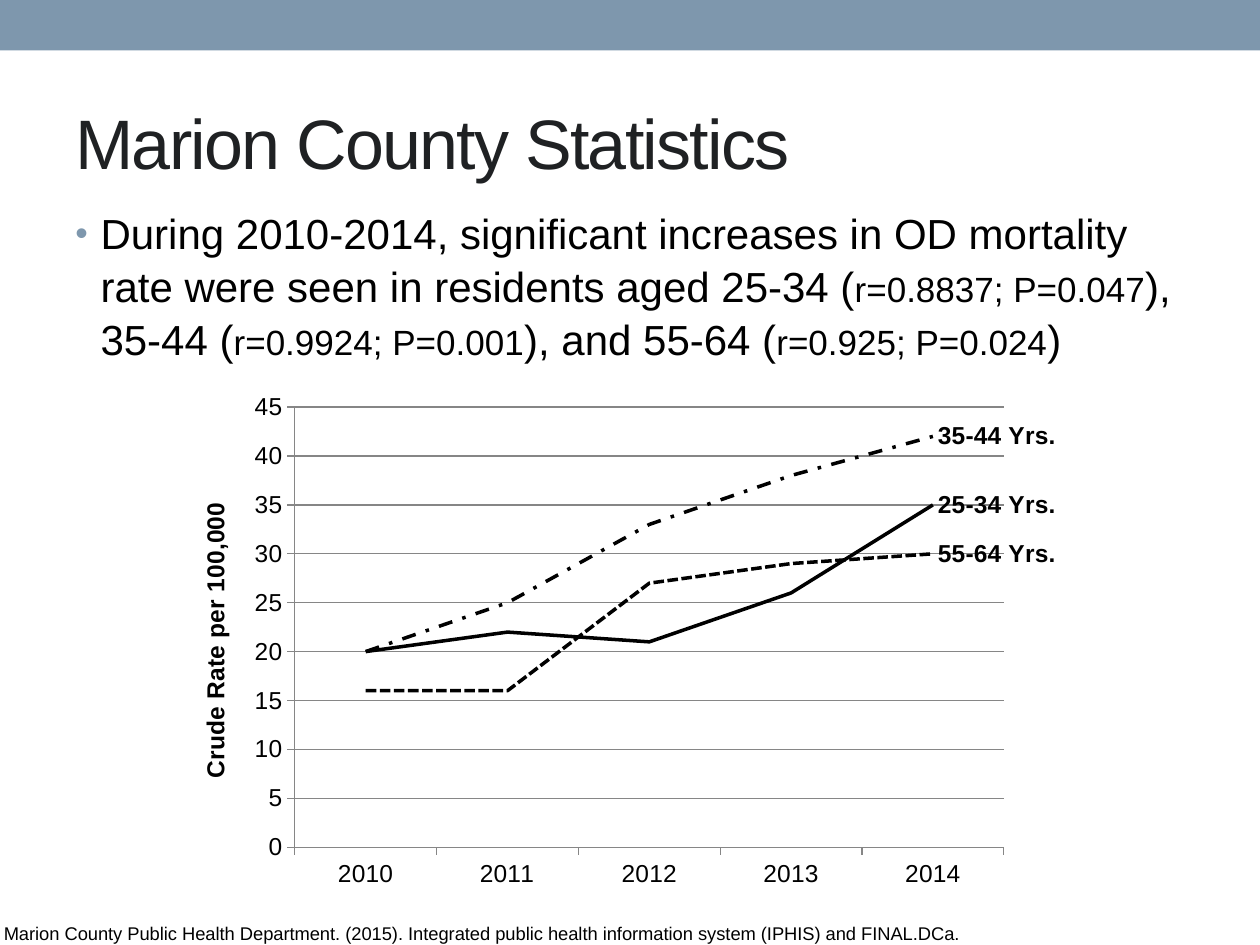
"""Build the Marion County overdose mortality slide."""
from dataclasses import dataclass

from lxml import etree
from pptx import Presentation
from pptx import util as u
from pptx.chart import data as chart_data
from pptx.dml.color import RGBColor
from pptx.enum import chart as charts, dml, shapes, text
from pptx.oxml import ns

BLACK = RGBColor(0x00, 0x00, 0x00)
TITLE_INK = RGBColor(0x1F, 0x21, 0x23)
SLATE = RGBColor(0x7E, 0x97, 0xAD)
GRID_GRAY = RGBColor(0x86, 0x86, 0x86)
FONT = "Arial"
YEARS = ("2010", "2011", "2012", "2013", "2014")


@dataclass(frozen=True)
class Box:
    left: float
    top: float
    width: float
    height: float

    def lengths(self) -> tuple:
        return tuple(u.Inches(n) for n in (self.left, self.top, self.width, self.height))


@dataclass(frozen=True)
class AgeGroup:
    name: str
    rates: tuple
    dash: dml.MSO_LINE


AGE_GROUPS = (
    AgeGroup("25-34 Yrs.", (20, 22, 21, 26, 35), dml.MSO_LINE.SOLID),
    AgeGroup("35-44 Yrs.", (20, 25, 33, 38, 42), dml.MSO_LINE.DASH_DOT),
    AgeGroup("55-64 Yrs.", (16, 16, 27, 29, 30), dml.MSO_LINE.SQUARE_DOT),
)
FINDINGS = (
    ("During 2010-2014, significant increases in OD mortality rate were seen in residents aged 25-34 (", 24),
    ("r=0.8837; P=0.047", 20),
    ("), 35-44 (", 24),
    ("r=0.9924; P=0.001", 20),
    ("), and 55-64 (", 24),
    ("r=0.925; P=0.024", 20),
    (")", 24),
)


def style_font(font, *, size: float, color: RGBColor = BLACK, bold: bool = False) -> None:
    font.name, font.size, font.bold = FONT, u.Pt(size), bold
    font.color.rgb = color


def add_run(paragraph, wording: str, *, size: float, color: RGBColor = BLACK, spacing: float = 0) -> None:
    run = paragraph.add_run()
    run.text = wording
    style_font(run.font, size=size, color=color)
    if spacing:
        run.font._element.set("spc", str(int(spacing * 100)))


def add_text_frame(slide, box: Box, *, anchor=text.MSO_ANCHOR.TOP, inset: bool = True):
    frame = slide.shapes.add_textbox(*box.lengths()).text_frame
    frame.word_wrap = True
    frame.vertical_anchor = anchor
    if not inset:
        frame.margin_left = frame.margin_top = frame.margin_right = frame.margin_bottom = 0
    return frame


def add_bullet(paragraph, *, color: RGBColor, percent: int, indent: float) -> None:
    properties = paragraph._p.get_or_add_pPr()
    properties.set("marL", str(u.Inches(indent)))
    properties.set("indent", str(-u.Inches(indent)))
    bullet_color = etree.SubElement(properties, ns.qn("a:buClr"))
    etree.SubElement(bullet_color, ns.qn("a:srgbClr"), val=str(color))
    etree.SubElement(properties, ns.qn("a:buSzPct"), val=str(percent * 1000))
    etree.SubElement(properties, ns.qn("a:buFont"), typeface=FONT)
    etree.SubElement(properties, ns.qn("a:buChar"), char="•")


def style_axis(axis) -> None:
    style_font(axis.tick_labels.font, size=14)
    axis.major_tick_mark = charts.XL_TICK_MARK.OUTSIDE
    axis.format.line.color.rgb = GRID_GRAY


def style_series(series, group: AgeGroup) -> None:
    series.smooth = False
    series.marker.style = charts.XL_MARKER_STYLE.NONE
    line = series.format.line
    line.color.rgb, line.width, line.dash_style = BLACK, u.Pt(2), group.dash
    series.data_labels.show_value = False
    label = series.points[len(YEARS) - 1].data_label
    style_font(label.font, size=14, bold=True)
    label.position = charts.XL_LABEL_POSITION.RIGHT
    for tag, shown in (("showVal", "0"), ("showSerName", "1")):
        for flag in series._element.xpath(f"c:dLbls/c:dLbl/c:{tag}"):
            flag.set("val", shown)


def place_plot(chart, **fractions: float) -> None:
    plot_area = chart._chartSpace.chart.plotArea
    for old_layout in plot_area.findall(ns.qn("c:layout")):
        plot_area.remove(old_layout)
    layout = etree.Element(ns.qn("c:layout"))
    plot_area.insert(0, layout)
    manual = etree.SubElement(layout, ns.qn("c:manualLayout"))
    settings = {"layoutTarget": "inner", "xMode": "edge", "yMode": "edge", **fractions}
    for tag, value in settings.items():
        etree.SubElement(manual, ns.qn(f"c:{tag}"), val=str(value))


def add_rate_chart(slide, box: Box) -> None:
    rates = chart_data.CategoryChartData(number_format="#,##0")
    rates.categories = YEARS
    for group in AGE_GROUPS:
        rates.add_series(group.name, group.rates)
    chart = slide.shapes.add_chart(charts.XL_CHART_TYPE.LINE, *box.lengths(), rates).chart
    chart.has_legend = chart.has_title = False
    style_font(chart.font, size=12)
    chart.plots[0].vary_by_categories = False
    place_plot(chart, x=0.12, y=0.055, w=0.804, h=0.832)

    value_axis = chart.value_axis
    for axis in (chart.category_axis, value_axis):
        style_axis(axis)
    value_axis.minimum_scale, value_axis.maximum_scale, value_axis.major_unit = 0, 45, 5
    value_axis.has_major_gridlines = True
    value_axis.major_gridlines.format.line.color.rgb = GRID_GRAY
    value_axis.tick_labels.number_format = "#,##0"
    value_axis.tick_labels.number_format_is_linked = False
    value_axis.axis_title.text_frame.text = "Crude Rate per 100,000"
    title_run = value_axis.axis_title.text_frame.paragraphs[0].runs[0]
    style_font(title_run.font, size=14, bold=True)

    for series, group in zip(chart.plots[0].series, AGE_GROUPS):
        style_series(series, group)


def main() -> None:
    presentation = Presentation()
    presentation.slide_width, presentation.slide_height = u.Inches(10), u.Inches(7.5)
    slide = presentation.slides.add_slide(presentation.slide_layouts[6])

    banner = slide.shapes.add_shape(shapes.MSO_SHAPE.RECTANGLE, *Box(0, 0, 10, 0.4).lengths())
    banner.shadow.inherit = False
    banner.fill.solid()
    banner.fill.fore_color.rgb = SLATE
    banner.line.fill.background()

    title = add_text_frame(slide, Box(0.5, 0.58, 7.92, 1.08), anchor=text.MSO_ANCHOR.MIDDLE)
    add_run(title.paragraphs[0], "Marion County Statistics", size=40, color=TITLE_INK, spacing=-1)

    findings = add_text_frame(slide, Box(0.5, 1.58, 9, 5.5)).paragraphs[0]
    findings.line_spacing = 1.05
    findings.space_before, findings.space_after = u.Pt(4.8), u.Pt(6)
    add_bullet(findings, color=SLATE, percent=85, indent=0.2)
    for wording, size in FINDINGS:
        add_run(findings, wording, size=size)

    citation = add_text_frame(slide, Box(0.03, 7.32, 9.89, 0.18), inset=False)
    citation.auto_size = text.MSO_AUTO_SIZE.SHAPE_TO_FIT_TEXT
    add_run(
        citation.paragraphs[0],
        "Marion County Public Health Department. (2015). "
        "Integrated public health information system (IPHIS) and FINAL.DCa.",
        size=10.5,
    )

    add_rate_chart(slide, Box(1.5, 3, 7, 4.2))
    presentation.save("out.pptx")


if __name__ == "__main__":
    main()
